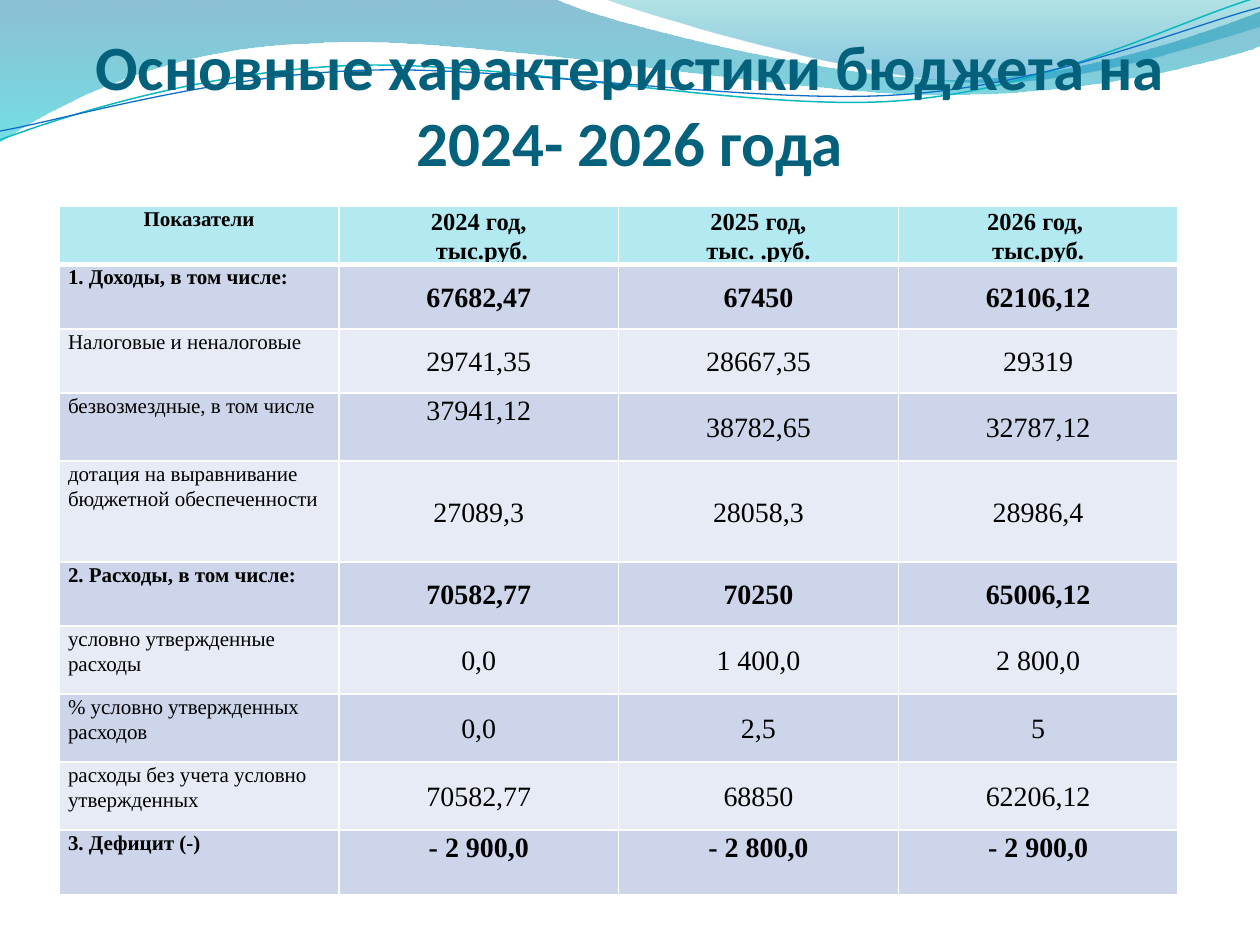
from math import cos, radians, sin
from lxml.etree import SubElement
from pptx import Presentation
from pptx.dml.color import RGBColor
from pptx.enum.text import MSO_ANCHOR, MSO_AUTO_SIZE, PP_ALIGN
from pptx.oxml.ns import qn
from pptx.util import Inches, Pt

BLACK = RGBColor(0x00, 0x00, 0x00)
WHITE = RGBColor(0xFF, 0xFF, 0xFF)
TEAL = RGBColor(0x04, 0x61, 0x7B)
HEAD = RGBColor(0xB3, 0xEA, 0xF2)
DARK = RGBColor(0xCC, 0xD5, 0xEA)
PALE = RGBColor(0xE7, 0xEB, 0xF5)
AQUA = RGBColor(0x0A, 0xB8, 0xBF)
BLUE = RGBColor(0x0F, 0x6F, 0xC6)
DEEP = RGBColor(0x00, 0x74, 0xA1)
CYAN = RGBColor(0x00, 0xC6, 0xCF)
SEA = RGBColor(0x00, 0xA1, 0xA9)
SKY = RGBColor(0x00, 0x8B, 0xBF)

TILT = 2.7
WAVE = [(0, 0), (4.4, -0.01), (4.76, 0.17, 6.64, 0.63, 7.58, 0.63),
        (8.53, 0.63, 9.58, 0.26, 10, 0.09), (10.01, 0.36),
        (9.83, 0.44, 8.7, 0.76, 7.46, 0.75),
        (6.22, 0.75, 3.82, 0.28, 2.57, 0.34),
        (1.29, 0.36, 0.46, 0.83, -0.01, 1.13), (0, 0)]
CREST = [(4.79, -0.01), (5.09, 0.11, 6.82, 0.62, 7.69, 0.65),
         (8.56, 0.69, 9.61, 0.32, 10, 0.21), (10, 0), (4.79, -0.01)]
UPPER = [(0, 1.11), (0.48, 0.93, 1.58, 0.57, 2.77, 0.52),
         (3.95, 0.47, 5.93, 0.89, 7.13, 0.8),
         (8.33, 0.71, 9.38, 0.15, 9.98, -0.02)]
LOWER = [(0, 1.04), (0.47, 0.96, 1.64, 0.61, 2.83, 0.56),
         (4.03, 0.51, 5.97, 0.84, 7.17, 0.75),
         (8.36, 0.67, 9.41, 0.21, 10, 0.06)]

TITLE = "Основные характеристики бюджета на 2024- 2026 года"
ROWS = [
    (0.38, "Показатели", "2024 год,\n тыс.руб.", "2025 год,\nтыс. .руб.", "2026 год, \nтыс.руб."),
    (0.51, "1. Доходы, в том числе:", "67682,47", "67450", "62106,12"),
    (0.51, "Налоговые и неналоговые", "29741,35", "28667,35", "29319"),
    (0.54, "безвозмездные, в том числе", "37941,12", "38782,65", "32787,12"),
    (0.8, "дотация на выравнивание бюджетной обеспеченности", "27089,3", "28058,3", "28986,4"),
    (0.51, "2. Расходы, в том числе:", "70582,77", "70250", "65006,12"),
    (0.54, "условно утвержденные расходы", "0,0", "1 400,0", "2 800,0"),
    (0.54, "% условно утвержденных расходов", "0,0", "2,5", "5"),
    (0.54, "расходы без учета условно утвержденных", "70582,77", "68850", "62206,12"),
    (0.51, "3. Дефицит (-)", "- 2 900,0", "- 2 800,0", "- 2 900,0"),
]
BOLD = {0, 1, 5, 9}
TOP = {(3, 1), (9, 1), (9, 2), (9, 3)}


def write(frame, text, size=12, font="Times New Roman", color=BLACK,
          bold=False, align=PP_ALIGN.LEFT, space=1.07):
    """Fill a text frame, one paragraph for each line."""
    for i, line in enumerate(text.split("\n")):
        para = frame.paragraphs[0] if i == 0 else frame.add_paragraph()
        para.alignment, para.line_spacing = align, space
        run = para.add_run()
        run.text = line
        run.font.size, run.font.name = Pt(size), font
        run.font.bold, run.font.color.rgb = bold, color


def turn(dots, mid, angle):
    """Rotate points clockwise about a centre."""
    x, y = mid
    c, s = cos(radians(angle)), sin(radians(angle))
    return [(x + (a - x) * c - (b - y) * s, y + (a - x) * s + (b - y) * c)
            for a, b in dots]


def curve(slide, parts, close, mid=(0, 0), angle=0):
    """Add a freeform of straight lines and cubic curves."""
    dots = [part[i:i + 2] for part in parts for i in range(0, len(part), 2)]
    dots = [(Inches(x), Inches(y)) for x, y in turn(dots, mid, angle)]
    pen = slide.shapes.build_freeform(*dots[0])
    pen.add_line_segments(dots[1:], close=close)
    shape = pen.convert_to_shape()
    shape.shadow.inherit = False
    shape.rotation = -angle
    lines = iter(list(shape.element.iter(qn("a:lnTo"))))
    for part in parts[1:]:
        line = next(lines)
        if len(part) == 6:
            line.tag = qn("a:cubicBezTo")
            for _ in range(2):
                spare = next(lines)
                line.append(spare[0])
                spare.getparent().remove(spare)
    return shape


def band(slide, parts, *stops):
    """Add a closed shape with a see-through vertical gradient."""
    shape = curve(slide, parts, True)
    shape.line.fill.background()
    shape.fill.gradient()
    shape.fill.gradient_angle = 270
    for stop, (place, color, _) in zip(shape.fill.gradient_stops, stops):
        stop.position, stop.color.rgb = place, color
    tints = list(shape.element.spPr.iter(qn("a:srgbClr")))
    for tint, (_, _, alpha) in zip(tints, stops):
        SubElement(tint, qn("a:alpha"), val=str(alpha * 1000))


def thread(slide, parts, color, width, mid):
    """Add a tilted open curve."""
    shape = curve(slide, parts, False, mid, TILT)
    shape.fill.background()
    shape.line.color.rgb, shape.line.width = color, Pt(width)


def edge(cell, **widths):
    """Draw white borders on the named sides of a cell."""
    props = cell._tc.get_or_add_tcPr()
    for side, width in widths.items():
        line = SubElement(props, qn("a:ln" + side), w=str(Pt(width)))
        fill = SubElement(line, qn("a:solidFill"))
        SubElement(fill, qn("a:srgbClr"), val=str(WHITE))


def grid(slide):
    """Add the budget table."""
    total = sum(row[0] for row in ROWS)
    table = slide.shapes.add_table(len(ROWS), 4, Inches(0.47), Inches(1.64),
                                   Inches(8.88), Inches(total)).table
    for col in table.columns:
        col.width = Inches(2.22)
    for r, (height, *texts) in enumerate(ROWS):
        table.rows[r].height = Inches(height)
        for c, text in enumerate(texts):
            cell = table.cell(r, c)
            edge(cell, L=1, R=1, T=3 if r == 1 else 1, B=3 if r == 0 else 1)
            cell.fill.solid()
            cell.fill.fore_color.rgb = HEAD if r == 0 else DARK if r % 2 else PALE
            cell.margin_left = cell.margin_right = Inches(0.07)
            cell.margin_top = cell.margin_bottom = 0
            high = r == 0 or c == 0 or (r, c) in TOP
            cell.vertical_anchor = MSO_ANCHOR.TOP if high else MSO_ANCHOR.MIDDLE
            size = 12 if c == 0 else 14 if r == 0 else 16
            align = PP_ALIGN.CENTER if r == 0 or c else PP_ALIGN.LEFT
            write(cell.text_frame, text, size=size, bold=r in BOLD, align=align)


def head(slide):
    """Place the title above the waves."""
    title = slide.shapes.title
    title.left, title.top = Inches(0.5), Inches(0.77)
    title.width, title.height = Inches(9), Inches(1.25)
    frame = title.text_frame
    frame.word_wrap, frame.auto_size = True, MSO_AUTO_SIZE.NONE
    frame.vertical_anchor = MSO_ANCHOR.BOTTOM
    frame.margin_left = frame.margin_right = 0
    frame.margin_top, frame.margin_bottom = Inches(0.05), Inches(0.6)
    write(frame, TITLE, size=36, font="Calibri", color=TEAL, bold=True,
          align=PP_ALIGN.CENTER, space=1.0)
    slide.shapes.element.append(title.element)


def main():
    """Build and save the slide."""
    deck = Presentation()
    deck.slide_width, deck.slide_height = Inches(10), Inches(7.5)
    slide = deck.slides.add_slide(deck.slide_layouts[5])
    band(slide, WAVE, (0, DEEP, 45), (1, CYAN, 55))
    band(slide, CREST, (0, SEA, 30), (0.8, SKY, 45))
    thread(slide, UPPER, AQUA, 0.85, (4.99, 0.58))
    thread(slide, LOWER, BLUE, 0.75, (5, 0.59))
    head(slide)
    grid(slide)
    deck.save("out.pptx")


if __name__ == "__main__":
    main()
